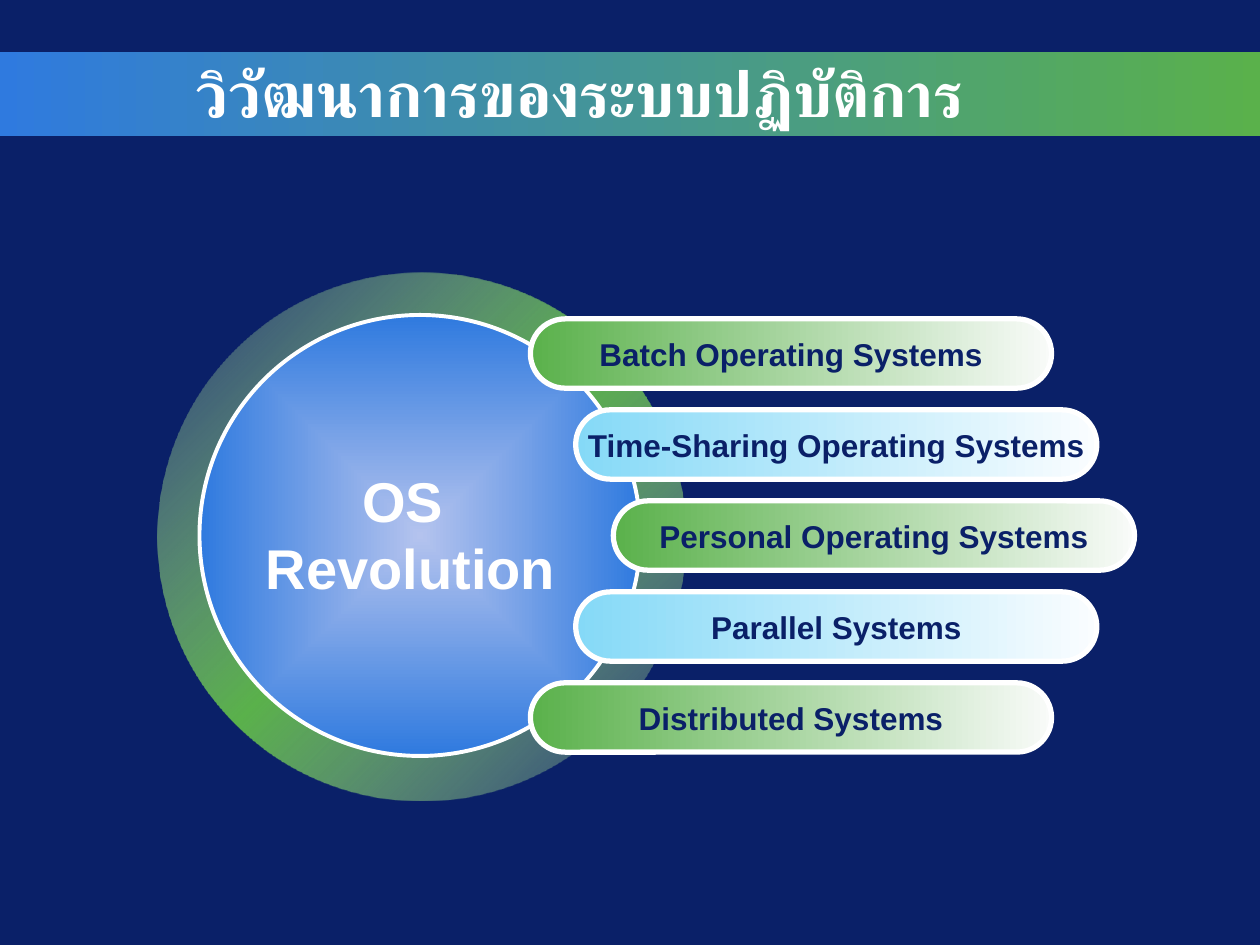
from lxml import etree
from pptx import Presentation
from pptx.dml.color import RGBColor
from pptx.enum.shapes import MSO_SHAPE
from pptx.enum.text import MSO_ANCHOR, MSO_AUTO_SIZE, PP_ALIGN
from pptx.oxml import parse_xml
from pptx.oxml.ns import nsdecls, qn
from pptx.util import Pt

TITLE = "วิวัฒนาการของระบบปฏิบัติการ"
HUB = ["OS ", "Revolution"]
SYSTEMS = [
    ("Batch Operating Systems", 303.1),
    ("Time-Sharing Operating Systems", 329),
    ("Personal Operating Systems", 350.5),
    ("Parallel Systems", 329),
    ("Distributed Systems", 303.1),
]

THEME = {
    "navy": "0A2068", "white": "FFFFFF",
    "band": [(0, "2F7ADF", 100), (100, "5AB14B", 100)],
    "ring": [(0, "B4D4B0", 12), (50, "5AB14B", 100), (100, "B4D4B0", 12)],
    "disc": [(0, "B4C3EE", 100), (100, "2F7ADF", 100)],
    "pills": [
        [(0, "5AB14B", 100), (100, "F9FBF9", 100)],
        [(0, "85D9F7", 100), (100, "FAFDFF", 100)],
    ],
    "title": {"name": "Roboto", "size": Pt(36), "bold": True},
    "hub": {"name": "Arial", "size": Pt(32), "bold": True},
    "pill": {"name": "Arial", "size": Pt(18), "bold": True},
}

LINEAR = '<a:lin ang="{}" scaled="0"/>'
CENTRED = ('<a:path path="shape"><a:fillToRect l="50000" t="50000" '
           'r="50000" b="50000"/></a:path>')
PILL_TOP, PILL_STEP, PILL_W, PILL_H = 182.2, 52, 297.8, 39.6


def place(sp, box):
    for key, value in zip(("left", "top", "width", "height"), box):
        setattr(sp, key, Pt(value))


def add_gradient(sp, stops, direction):
    gs = "".join(
        f'<a:gs pos="{pos * 1000}"><a:srgbClr val="{color}">'
        f'<a:alpha val="{alpha * 1000}"/></a:srgbClr></a:gs>'
        for pos, color, alpha in stops)
    grad = parse_xml(f'<a:gradFill {nsdecls("a")} rotWithShape="1">'
                     f'<a:gsLst>{gs}</a:gsLst>{direction}</a:gradFill>')
    sp.element.spPr.find(qn("a:prstGeom")).addnext(grad)


def add_shape(s, kind, box, stops, direction=LINEAR.format(0), line=0, adj=None):
    sp = s.shapes.add_shape(kind, *map(Pt, box))
    sp.shadow.inherit = False
    if adj is not None:
        sp.adjustments[0] = adj
    if line:
        sp.line.color.rgb = RGBColor.from_string(THEME["white"])
        sp.line.width = Pt(line)
    else:
        sp.line.fill.background()
    add_gradient(sp, stops, direction)
    return sp


def write(sp, lines, style, color, align=PP_ALIGN.CENTER, **frame):
    tf = sp.text_frame
    for key, value in frame.items():
        setattr(tf, key, value)
    for i, line in enumerate(lines):
        p = tf.paragraphs[0] if i == 0 else tf.add_paragraph()
        p.alignment = align
        r = p.add_run()
        r.text = line
        for key, value in THEME[style].items():
            setattr(r.font, key, value)
        r.font.color.rgb = RGBColor.from_string(THEME[color])


def add_text_shadow(sp):
    for fill in sp.element.txBody.iter(qn("a:solidFill")):
        fill.addnext(parse_xml(
            f'<a:effectLst {nsdecls("a")}><a:outerShdw dist="35921" dir="2700000">'
            '<a:srgbClr val="000000"/></a:outerShdw></a:effectLst>'))


def main():
    prs = Presentation()
    prs.slide_width, prs.slide_height = Pt(720), Pt(540)
    s = prs.slides.add_slide(prs.slide_layouts[5])
    s.background.fill.solid()
    s.background.fill.fore_color.rgb = RGBColor.from_string(THEME["navy"])

    title = s.shapes.title
    place(title, (36, 30, 522, 45))
    write(title, [TITLE], "title", "white", PP_ALIGN.RIGHT, word_wrap=True,
          auto_size=MSO_AUTO_SIZE.NONE, vertical_anchor=MSO_ANCHOR.MIDDLE)
    for latin in title.element.txBody.iter(qn("a:latin")):
        cs = etree.Element(qn("a:cs"), typeface=THEME["title"]["name"])
        latin.addnext(cs)
    band = add_shape(s, MSO_SHAPE.RECTANGLE, (0, 30, 720, 48), THEME["band"])
    title.element.addprevious(band.element)

    add_shape(s, MSO_SHAPE.DONUT, (90, 156, 301.7, 301.7), THEME["ring"],
              LINEAR.format(2700000), adj=0.09)
    add_shape(s, MSO_SHAPE.OVAL, (114, 180, 252, 252), THEME["disc"], CENTRED, 2.25)

    for i, (name, left) in enumerate(SYSTEMS):
        box = (left, PILL_TOP + i * PILL_STEP, PILL_W, PILL_H)
        pill = add_shape(s, MSO_SHAPE.ROUNDED_RECTANGLE, box,
                         THEME["pills"][i % 2], line=3, adj=0.5)
        write(pill, [name], "pill", "navy", word_wrap=False,
              vertical_anchor=MSO_ANCHOR.MIDDLE)

    hub = s.shapes.add_textbox(*map(Pt, (144, 263, 181.4, 85)))
    write(hub, HUB, "hub", "white", word_wrap=False,
          auto_size=MSO_AUTO_SIZE.SHAPE_TO_FIT_TEXT)
    add_text_shadow(hub)

    prs.save("out.pptx")


if __name__ == "__main__":
    main()
